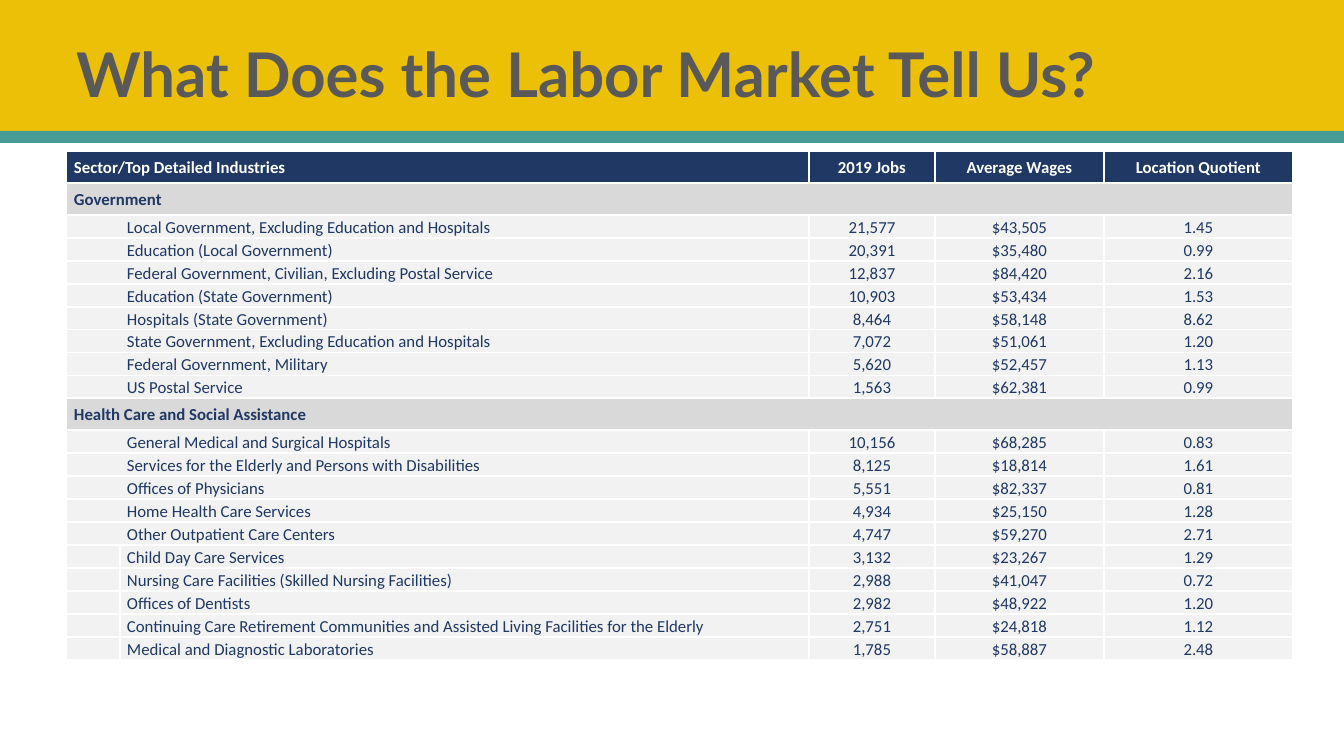
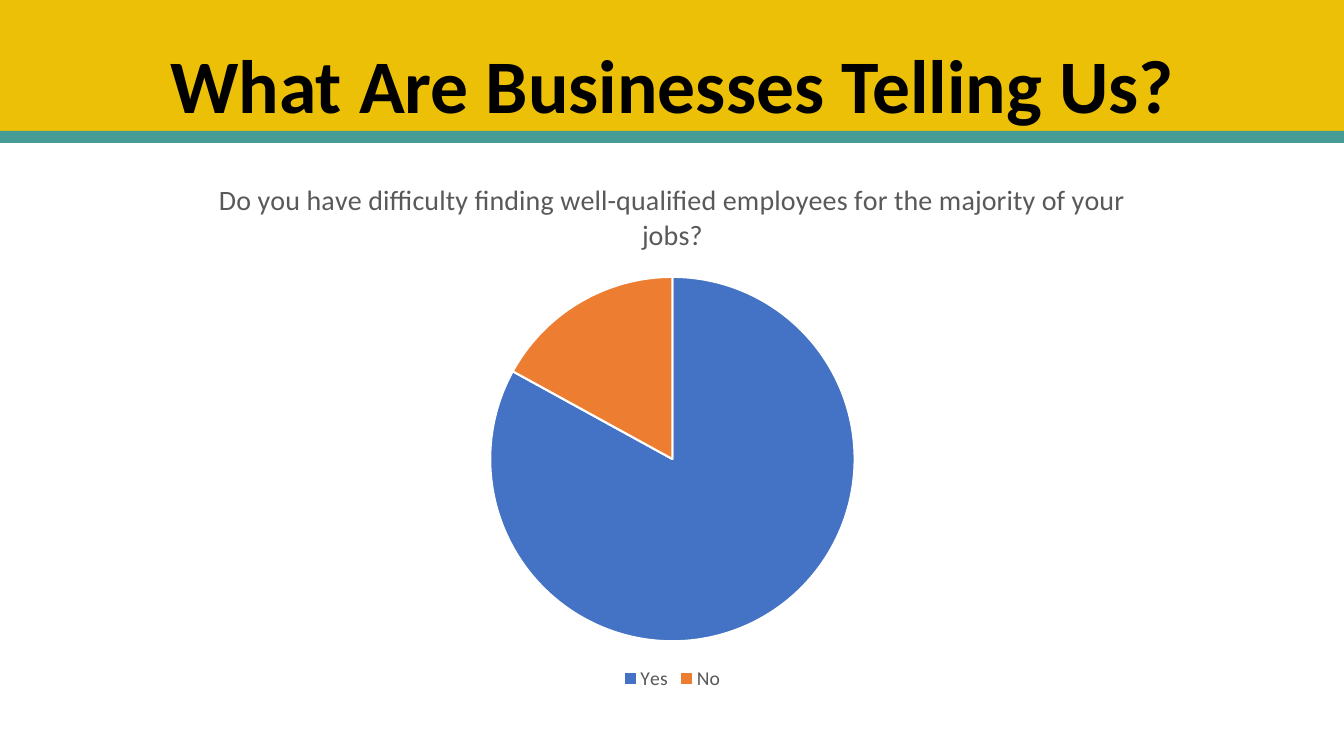
import pptx
import pptx.chart.data
import pptx.dml.color
import pptx.enum.chart
import pptx.enum.shapes
import pptx.enum.text
import pptx.oxml
import pptx.oxml.ns
import pptx.util

RGB = pptx.dml.color.RGBColor
GOLD = RGB(0xEC, 0xC0, 0x07)
TEAL = RGB(0x46, 0x9C, 0x95)
NAVY = RGB(0x1F, 0x38, 0x64)
GRAY = RGB(0x59, 0x59, 0x59)
SILVER = RGB(0xD9, 0xD9, 0xD9)
PALE = RGB(0xF2, 0xF2, 0xF2)
BLUE = RGB(0x44, 0x72, 0xC4)
ORANGE = RGB(0xED, 0x7D, 0x31)
WHITE = RGB(0xFF, 0xFF, 0xFF)
BLACK = RGB(0, 0, 0)

ALIGN = pptx.enum.text.PP_ALIGN
ANCHOR = pptx.enum.text.MSO_ANCHOR
Pt = pptx.util.Pt
NS = pptx.oxml.ns.nsdecls("a")
PX = 914400 / 100.8


def px(*nums):
    return [pptx.util.Emu(round(n * PX)) for n in nums]


def style(font, name, size, color, bold=False):
    font.name, font.size, font.bold = name, Pt(size), bold
    font.color.rgb = color


deck = pptx.Presentation()
deck.slide_width, deck.slide_height = px(1344, 756)
layout = deck.slide_layouts[5]

# Slides and titles
TITLES = [
    ("What Does the Labor Market Tell Us?", (66, 5, 1159, 146),
     ANCHOR.MIDDLE, ALIGN.LEFT, "Lato", 44, GRAY),
    ("What Are Businesses Telling Us?", (93, 32, 1159, 103),
     ANCHOR.BOTTOM, ALIGN.CENTER, "Calibri", 54, BLACK),
]
for text, box, anchor, align, face, size, color in TITLES:
    title = deck.slides.add_slide(layout).shapes.title
    title.left, title.top, title.width, title.height = px(*box)
    frame = title.text_frame
    frame.text = text
    frame.vertical_anchor = anchor
    frame.auto_size = pptx.enum.text.MSO_AUTO_SIZE.NONE
    para = frame.paragraphs[0]
    para.alignment, para.line_spacing = align, 0.9
    style(para.font, face, size, color, True)
market, survey = deck.slides

# Bands, moved into the shared layout
for i, (top, height, color) in enumerate([(0, 142, GOLD), (131, 12, TEAL)]):
    band = market.shapes.add_shape(
        pptx.enum.shapes.MSO_SHAPE.RECTANGLE, *px(0, top, 1344, height))
    band.shadow.inherit = False
    band.fill.solid()
    band.fill.fore_color.rgb = color
    band.line.fill.background()
    layout.shapes.element.insert(2 + i, band.element)

# Labor market table: one-item rows are sectors
ROWS = [
    ("Sector/Top Detailed Industries", "2019 Jobs", "Average Wages", "Location Quotient"),
    ("Government",),
    ("Local Government, Excluding Education and Hospitals", "21,577", "$43,505", "1.45"),
    ("Education (Local Government)", "20,391", "$35,480", "0.99"),
    ("Federal Government, Civilian, Excluding Postal Service", "12,837", "$84,420", "2.16"),
    ("Education (State Government)", "10,903", "$53,434", "1.53"),
    ("Hospitals (State Government)", "8,464", "$58,148", "8.62"),
    ("State Government, Excluding Education and Hospitals", "7,072", "$51,061", "1.20"),
    ("Federal Government, Military", "5,620", "$52,457", "1.13"),
    ("US Postal Service", "1,563", "$62,381", "0.99"),
    ("Health Care and Social Assistance",),
    ("General Medical and Surgical Hospitals", "10,156", "$68,285", "0.83"),
    ("Services for the Elderly and Persons with Disabilities", "8,125", "$18,814", "1.61"),
    ("Offices of Physicians", "5,551", "$82,337", "0.81"),
    ("Home Health Care Services", "4,934", "$25,150", "1.28"),
    ("Other Outpatient Care Centers", "4,747", "$59,270", "2.71"),
    ("Child Day Care Services", "3,132", "$23,267", "1.29"),
    ("Nursing Care Facilities (Skilled Nursing Facilities)", "2,988", "$41,047", "0.72"),
    ("Offices of Dentists", "2,982", "$48,922", "1.20"),
    ("Continuing Care Retirement Communities and Assisted Living Facilities for the Elderly",
     "2,751", "$24,818", "1.12"),
    ("Medical and Diagnostic Laboratories", "1,785", "$58,887", "2.48"),
]
WIDTHS = [54, 689, 126, 169, 189]
SPLIT = 16  # first row with a line beside the indent

table = market.shapes.add_table(
    len(ROWS), len(WIDTHS), *px(66, 151, sum(WIDTHS), 490)).table
table.first_row = table.horz_banding = False
for col, width in zip(table.columns, px(*WIDTHS)):
    col.width = width

for r, row in enumerate(ROWS):
    head, sector = r == 0, len(row) == 1
    wide = head or sector
    table.rows[r].height = px(30 if head else 32 if sector else 22)[0]
    if wide:
        table.cell(r, 0).merge(table.cell(r, 4 if sector else 1))
        texts = [row[0], "", *(row[1:] or [""] * 3)]
    else:
        texts = ["", *row]
    for c, text in enumerate(texts):
        cell = table.cell(r, c)
        label = wide and c == 0
        side, top, foot = (10, 5, 5) if label else (7, 1, 0)
        cell.margin_left, cell.margin_right = px(side, side)
        cell.margin_top, cell.margin_bottom = px(top, foot)
        cell.vertical_anchor = ANCHOR.TOP if label else ANCHOR.MIDDLE
        if label:
            cell.margin_left = px(8)[0]
        cell.fill.solid()
        cell.fill.fore_color.rgb = NAVY if head else SILVER if sector else PALE
        para = cell.text_frame.paragraphs[0]
        if text:
            para.text = text
            para.alignment = ALIGN.CENTER if c > 1 else ALIGN.LEFT
            para.line_spacing = 1.07
            style(para.font, "Calibri", 12, WHITE if head else NAVY, wide)
        else:
            para._p.append(pptx.oxml.parse_xml(f'<a:endParaRPr {NS} sz="1200"/>'))

        # White borders, none between indent and name above the split
        bare = {0: "R", 1: "L"}.get(c) if r < SPLIT and not wide else None
        for i, edge in enumerate("LRTB"):
            fill = ("<a:noFill/>" if edge == bare else
                    f'<a:solidFill><a:srgbClr val="{WHITE}"/></a:solidFill>')
            cell._tc.tcPr.insert(i, pptx.oxml.parse_xml(
                f'<a:ln{edge} {NS} w="19050">{fill}</a:ln{edge}>'))

# Survey pie chart
data = pptx.chart.data.CategoryChartData()
data.categories = ["Yes", "No"]
data.add_series("Series 1", [83, 17])
chart = survey.shapes.add_chart(
    pptx.enum.chart.XL_CHART_TYPE.PIE, *px(93, 159, 1159, 536), data).chart
style(chart.font, "Calibri", 10, BLACK)
chart.has_title = True
chart.chart_title.include_in_layout = False
para = chart.chart_title.text_frame.paragraphs[0]
para.text = "Do you have difficulty finding well-qualified employees for the majority of your jobs?"
style(para.font, "Calibri", 20, GRAY)
chart.has_legend = True
chart.legend.position = pptx.enum.chart.XL_LEGEND_POSITION.BOTTOM
chart.legend.include_in_layout = False
style(chart.legend.font, "Calibri", 14, GRAY)

plot = chart.plots[0]
plot.vary_by_categories = True
for i, color in enumerate([BLUE, ORANGE]):
    form = plot.series[0].points[i].format
    form.fill.solid()
    form.fill.fore_color.rgb = color
    form.line.color.rgb = WHITE
    form.line.width = Pt(1.5)

# Fixed place for the pie inside the chart
area = chart._chartSpace.chart.plotArea
for old in area.findall(pptx.oxml.ns.qn("c:layout")):
    area.remove(old)
spots = "".join(f'<c:{key} val="{val}"/>' for key, val in [
    ("layoutTarget", "inner"), ("xMode", "edge"), ("yMode", "edge"),
    ("x", 0.34), ("y", 0.22), ("w", 0.32), ("h", 0.68)])
area.insert(0, pptx.oxml.parse_xml(
    f'<c:layout {pptx.oxml.ns.nsdecls("c")}><c:manualLayout>{spots}'
    '</c:manualLayout></c:layout>'))

deck.save("out.pptx")
